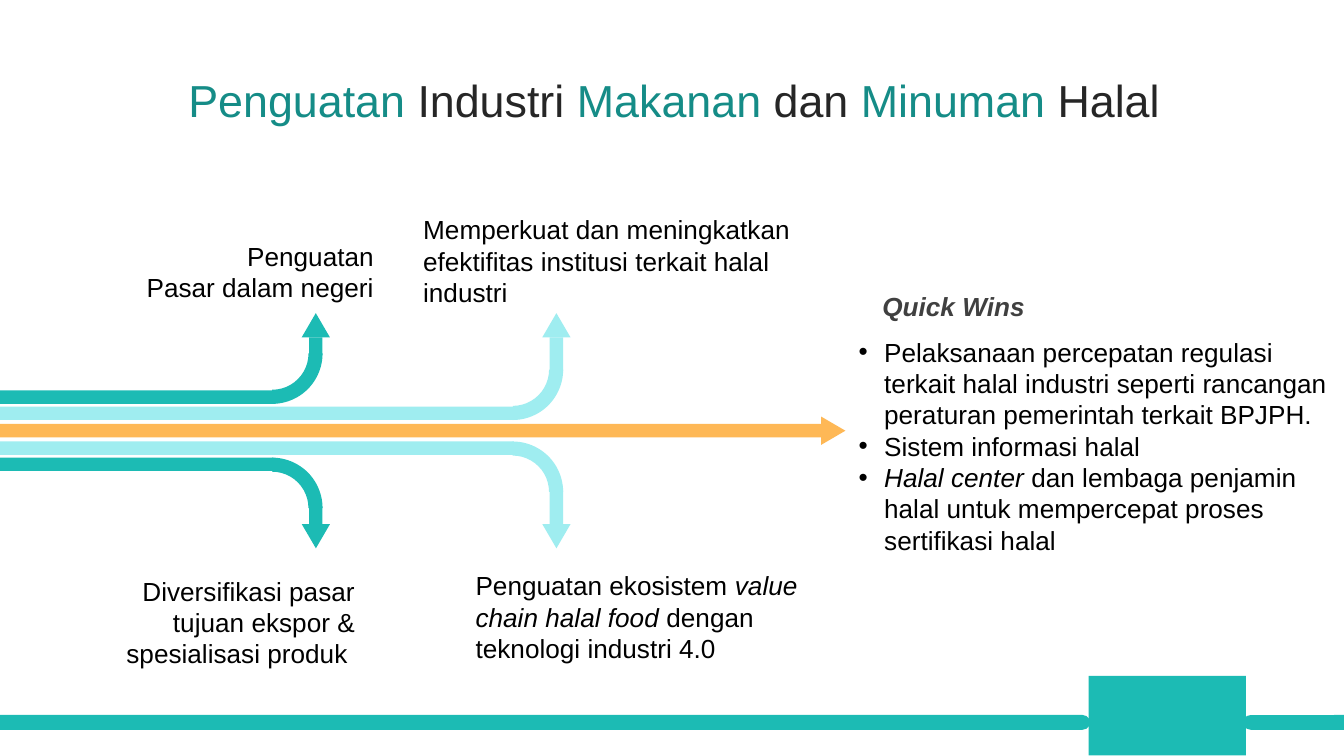
from lxml import etree
from pptx import Presentation
from pptx.dml.color import RGBColor
from pptx.enum.shapes import MSO_SHAPE
from pptx.enum.text import MSO_ANCHOR, MSO_AUTO_SIZE, PP_ALIGN
from pptx.oxml.ns import qn
from pptx.util import Inches, Pt

RECTANGLE = MSO_SHAPE.RECTANGLE
TRIANGLE = MSO_SHAPE.ISOSCELES_TRIANGLE
BLOCK_ARC = MSO_SHAPE.BLOCK_ARC
ROUNDED_END = MSO_SHAPE.ROUND_2_SAME_RECTANGLE
LEFT, CENTER, RIGHT = PP_ALIGN.LEFT, PP_ALIGN.CENTER, PP_ALIGN.RIGHT

COLORS = {
    "teal": "1CBBB4",
    "aqua": "9FEDF0",
    "orange": "FEB856",
    "title_teal": "158C87",
    "title_dark": "262626",
    "heading": "404040",
    "text": "000000",
}
BAR = 0.1
HEAD_WIDTH, HEAD_LENGTH = 0.21, 0.18
BEND = 0.75
OVERLAP = 0.01
ITALIC = {"italic": True}


def color(name):
    return RGBColor.from_string(COLORS[name])


def add_part(shapes, kind, box, fill, rotation=0, adjustments=()):
    left, top, width, height = box
    if rotation % 180:
        left, top = left + (width - height) / 2, top + (height - width) / 2
        width, height = height, width
    shape = shapes.add_shape(kind, *map(Inches, (left, top, width, height)))
    shape.rotation = rotation
    shape.shadow.inherit = False
    shape.fill.solid()
    shape.fill.fore_color.rgb = color(fill)
    shape.line.fill.background()
    for index, value in enumerate(adjustments):
        shape.adjustments[index] = value


def add_run(paragraph, text, size, color_name, formats=None):
    run = paragraph.add_run()
    run.text = text
    run.font.color.rgb = color(color_name)
    values = {"name": "Arial", "size": Pt(size), **(formats or {})}
    for name, value in values.items():
        setattr(run.font, name, value)


def add_title(slide, box):
    title = slide.shapes.title
    title.left, title.top, title.width, title.height = map(Inches, box)
    frame = title.text_frame
    frame_format = {
        "word_wrap": True,
        "auto_size": MSO_AUTO_SIZE.NONE,
        "vertical_anchor": MSO_ANCHOR.MIDDLE,
    }
    for name, value in frame_format.items():
        setattr(frame, name, value)
    paragraph = frame.paragraphs[0]
    paragraph_format = {"alignment": CENTER, "line_spacing": 0.9, "space_before": Pt(10)}
    for name, value in paragraph_format.items():
        setattr(paragraph, name, value)
    words = ["Penguatan ", "Industri ", "Makanan ", "dan ", "Minuman", " Halal"]
    for index, word in enumerate(words):
        add_run(paragraph, word, 24, ("title_teal", "title_dark")[index % 2])


def add_text(slide, box, paragraphs, alignment=LEFT, color_name="text", bullets=False):
    frame = slide.shapes.add_textbox(*map(Inches, box)).text_frame
    frame.word_wrap = True
    frame.auto_size = MSO_AUTO_SIZE.SHAPE_TO_FIT_TEXT
    for index, runs in enumerate(paragraphs):
        paragraph = frame.add_paragraph() if index else frame.paragraphs[0]
        paragraph.alignment = alignment
        if bullets:
            properties = paragraph._p.get_or_add_pPr()
            properties.set("marL", str(Inches(0.19)))
            properties.set("indent", str(-Inches(0.19)))
            etree.SubElement(properties, qn("a:buFont")).set("typeface", "Arial")
            etree.SubElement(properties, qn("a:buChar")).set("char", "•")
        for text, formats in runs:
            add_run(paragraph, text, 14, color_name, formats)


def add_bent_arrow(shapes, box, fill, upward):
    left, top, width, height = box
    right, bottom = left + width, top + height
    bar_top = bottom - BAR if upward else top
    bend_top = bottom - BEND if upward else top
    bend_middle = bend_top + BEND / 2
    stem_top = top + HEAD_LENGTH if upward else bend_middle - OVERLAP
    stem_bottom = bend_middle + OVERLAP if upward else bottom - HEAD_LENGTH
    head_top = top if upward else bottom - HEAD_LENGTH
    stem_left = right - BAR
    head_left = right - (BAR + HEAD_WIDTH) / 2

    add_part(shapes, BLOCK_ARC, (right - BEND, bend_top, BEND, BEND), fill,
             90 if upward else 0, (162, 0, 0.14))
    add_part(shapes, RECTANGLE, (left, bar_top, width - BEND / 2 + OVERLAP, BAR), fill)
    add_part(shapes, RECTANGLE, (stem_left, stem_top, BAR, stem_bottom - stem_top), fill)
    add_part(shapes, TRIANGLE, (head_left, head_top, HEAD_WIDTH, HEAD_LENGTH), fill,
             0 if upward else 180)


def add_straight_arrow(shapes, box, fill):
    left, top, width, height = box
    bar_top = top + (height - BAR) / 2
    add_part(shapes, RECTANGLE, (left, bar_top, width - HEAD_LENGTH, BAR), fill)
    add_part(shapes, TRIANGLE, (left + width - HEAD_LENGTH, top, HEAD_LENGTH, height), fill, 90)


def add_arrows(slide, box):
    left, top, width, height = box
    shapes = slide.shapes.add_group_shape().shapes
    middle = top + height / 2
    for reach, offset, fill in ((3.37, 0.2, "teal"), (5.16, 0.08, "aqua")):
        arm = height / 2 - offset
        add_bent_arrow(shapes, (left, top, reach, arm), fill, True)
        add_bent_arrow(shapes, (left, middle + offset, reach, arm), fill, False)
    add_straight_arrow(shapes, (left, middle - HEAD_WIDTH / 2, width, HEAD_WIDTH), "orange")


def add_strategies(slide, box):
    left, top, width, height = box
    strategies = [
        (0, 0.2, 2.92, 0.57, RIGHT, [[("Penguatan", None)], [("Pasar dalam negeri", None)]]),
        (3.09, 0, 3.15, 0.81, LEFT, [
            [("Memperkuat dan meningkatkan", None)],
            [("efektifitas institusi terkait halal industri", None)],
        ]),
        (0.6, 2.69, 2.18, 0.81, RIGHT, [
            [("Diversifikasi pasar tujuan ekspor & spesialisasi produk ", None)],
        ]),
        (3.48, 2.65, 2.67, 0.81, LEFT, [[
            ("Penguatan ekosistem ", None),
            ("value chain halal food ", ITALIC),
            ("dengan teknologi industri 4.0", None),
        ]]),
    ]
    for x, y, text_width, text_height, alignment, paragraphs in strategies:
        add_text(slide, (left + x, top + y, text_width, text_height), paragraphs, alignment)


def add_quick_wins(slide, box):
    left, top, width, height = box
    add_text(slide, (left - 0.37, top, 2.35, 0.34),
             [[("Quick Wins", {"bold": True, "italic": True})]], CENTER, "heading")
    add_text(slide, (left, top + 0.34, width, height - 0.34), [
        [("Pelaksanaan percepatan regulasi terkait halal industri seperti rancangan "
          "peraturan pemerintah terkait BPJPH.", None)],
        [("Sistem informasi halal", None)],
        [("Halal center ", ITALIC),
         ("dan lembaga penjamin halal untuk mempercepat proses sertifikasi halal", None)],
    ], bullets=True)


def add_footer(slide, box):
    left, top, width, height = box
    line_top = top + 0.29
    add_part(slide.shapes, ROUNDED_END, (left, line_top, 8.11, 0.11), "teal", 90, (0.5, 0))
    add_part(slide.shapes, ROUNDED_END, (left + 9.25, line_top, width - 9.25, 0.11),
             "teal", 270, (0.5, 0))
    add_part(slide.shapes, RECTANGLE, (left + 8.1, top, 1.17, height), "teal")


def main():
    presentation = Presentation()
    presentation.slide_width = Inches(10)
    presentation.slide_height = Inches(10 * 9 / 16)
    slide = presentation.slides.add_slide(presentation.slide_layouts[5])
    add_footer(slide, (0, 5.03, 10, 0.59))
    add_title(slide, (0.27, 0.47, 9.49, 0.59))
    add_arrows(slide, (-0.97, 2.33, 7.26, 1.75))
    add_quick_wins(slide, (6.29, 2.11, 3.69, 2.09))
    add_strategies(slide, (-0.04, 1.54, 6.24, 3.5))
    presentation.save("out.pptx")


if __name__ == "__main__":
    main()
